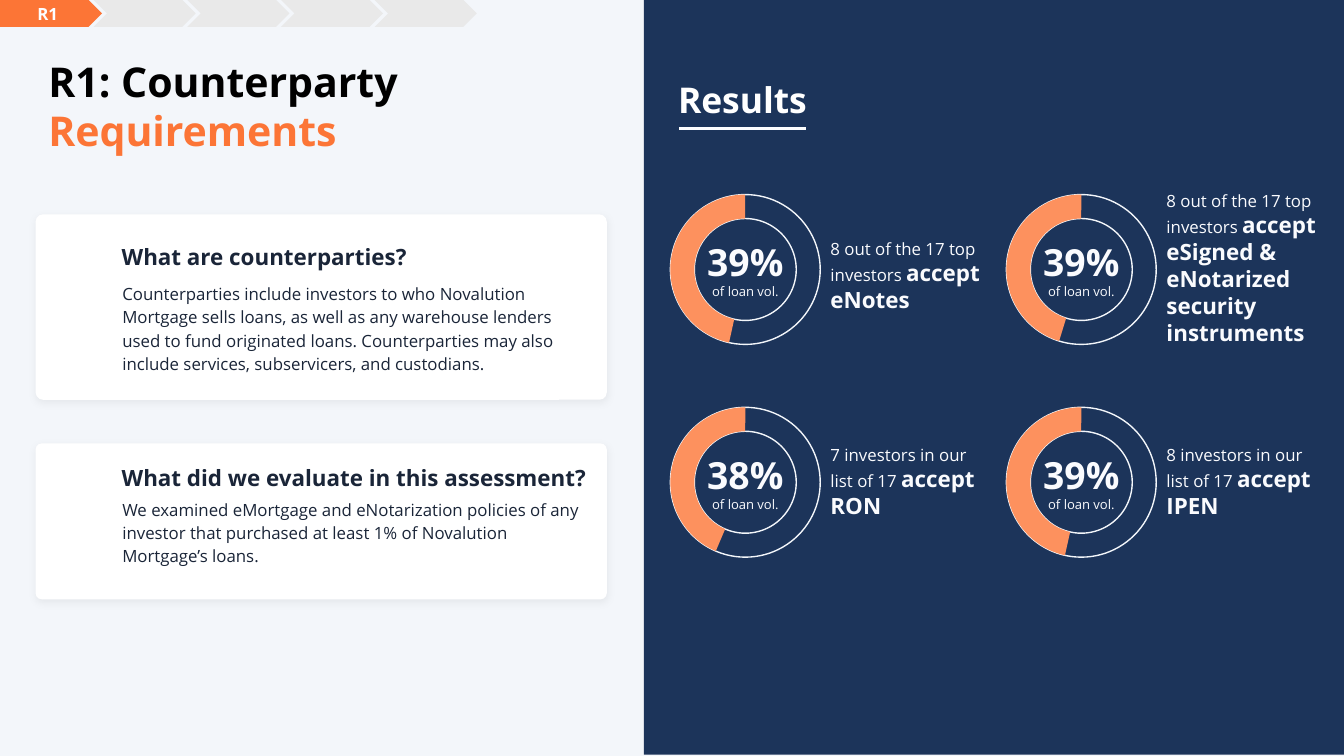
from dataclasses import dataclass
from typing import Any

from lxml import etree
from pptx import Presentation
from pptx.dml.color import RGBColor
from pptx.enum.shapes import MSO_CONNECTOR, MSO_SHAPE
from pptx.enum.text import MSO_ANCHOR, PP_ALIGN
from pptx.oxml import parse_xml
from pptx.oxml.ns import nsdecls, qn
from pptx.util import Inches, Pt

RECT, ROUND_RECT = MSO_SHAPE.RECTANGLE, MSO_SHAPE.ROUNDED_RECTANGLE
DONUT, BLOCK_ARC = MSO_SHAPE.DONUT, MSO_SHAPE.BLOCK_ARC
PENTAGON, CHEVRON = MSO_SHAPE.PENTAGON, MSO_SHAPE.CHEVRON
STRAIGHT = MSO_CONNECTOR.STRAIGHT
TOP, MIDDLE = MSO_ANCHOR.TOP, MSO_ANCHOR.MIDDLE
LEFT, CENTER = PP_ALIGN.LEFT, PP_ALIGN.CENTER

COLS, ROWS = 100, 56.25
TIGHT, WIDE = (0.7, 0.4), (1, 1)


@dataclass(frozen=True)
class Theme:
    font: str = "Open Sans"
    page: str = "F3F6FA"
    panel: str = "1C345A"
    white: str = "FFFFFF"
    light: str = "FAFBFE"
    bright: str = "FCFDFF"
    ink: str = "1A2538"
    black: str = "000000"
    accent: str = "FC7536"
    arc: str = "FD915E"
    idle: str = "E9E9E9"
    title: float = 22
    percent: float = 20
    section: float = 19
    heading: float = 12
    body: float = 9
    caption: float = 7


T = Theme()


@dataclass(frozen=True)
class Box:
    col: float
    row: float
    cols: float
    rows: float

    def emu(self) -> tuple[int, ...]:
        return tuple(cells(v) for v in (self.col, self.row, self.cols, self.rows))


@dataclass(frozen=True)
class Run:
    text: str
    size: float
    color: str
    bold: bool = False


@dataclass(frozen=True)
class Card:
    row: float
    rows: float
    heading: str
    heading_row: float
    body: str
    body_row: float


@dataclass(frozen=True)
class Gauge:
    percent: str
    start: float
    lead: str
    strong: str
    label_row: float
    label_rows: float


def cells(n: float) -> int:
    return Inches(n * 0.1)


def rgb(value: str) -> RGBColor:
    return RGBColor.from_string(value)


def write(sp: Any, paragraphs: list[list[Run]], inset: tuple[float, float],
          align: Any = LEFT, anchor: Any = TOP, spacing: float = 1.0) -> None:
    tf = sp.text_frame
    x, y = (cells(v) for v in inset)
    frame = {"word_wrap": True, "vertical_anchor": anchor, "margin_left": x,
             "margin_right": x, "margin_top": y, "margin_bottom": y}
    for name, value in frame.items():
        setattr(tf, name, value)
    for i, runs in enumerate(paragraphs):
        p = tf.add_paragraph() if i else tf.paragraphs[0]
        p.alignment, p.line_spacing, p.space_before = align, spacing, Pt(0)
        for run in runs:
            r = p.add_run()
            r.text = run.text
            style = {"name": T.font, "size": Pt(run.size), "bold": run.bold}
            for name, value in style.items():
                setattr(r.font, name, value)
            r.font.color.rgb = rgb(run.color)


def add_text(shapes: Any, box: Box, paragraphs: list[list[Run]],
             inset: tuple[float, float] = TIGHT, **options: Any) -> None:
    write(shapes.add_textbox(*box.emu()), paragraphs, inset, **options)


def add_shape(shapes: Any, kind: Any, box: Box, fill: str | None = None,
              line: str | None = None, adjust: tuple[float, ...] = ()) -> Any:
    sp = shapes.add_shape(kind, *box.emu())
    sp.shadow.inherit = False
    if fill:
        sp.fill.solid()
        sp.fill.fore_color.rgb = rgb(fill)
    else:
        sp.fill.background()
    if line:
        sp.line.color.rgb = rgb(line)
        sp.line.width = Pt(0.75)
    else:
        sp.line.fill.background()
    for i, value in enumerate(adjust):
        sp.adjustments[i] = value
    return sp


def add_card(shapes: Any, card: Card) -> None:
    sp = add_shape(shapes, ROUND_RECT, Box(2.65, card.row, 42.5, card.rows),
                   T.white, adjust=(0.04,))
    effects = sp._element.spPr.find(qn("a:effectLst"))
    effects.append(parse_xml(
        f'<a:outerShdw {nsdecls("a")} blurRad="{Pt(4.5)}" dist="{Pt(1.5)}" '
        f'dir="5400000" algn="t" rotWithShape="0"><a:srgbClr val="{T.black}">'
        '<a:alpha val="5000"/></a:srgbClr></a:outerShdw>'))
    add_text(shapes, Box(8.35, card.heading_row, 36.2, 2.8),
             [[Run(card.heading, T.heading, T.ink, True)]])
    add_text(shapes, Box(8.4, card.body_row, 36, 7.2),
             [[Run(card.body, T.body, T.ink)]], spacing=1.15)


def add_gauge(shapes: Any, gauge: Gauge, col: float, row: float) -> None:
    group = shapes.add_group_shape().shapes
    ring = Box(col, row, 11.15, 11.15)
    add_shape(group, DONUT, ring, line=T.page, adjust=(0.16,))
    add_shape(group, BLOCK_ARC, ring, T.arc,
              adjust=(gauge.start * 0.6, 270 * 0.6, 0.16))
    add_text(group, Box(col + 1.93, row + 2.9, 7.3, 5.3),
             [[Run(gauge.percent, T.percent, T.light, True)],
              [Run("of loan vol.", T.caption, T.light)]], align=CENTER)
    add_text(group, Box(col + 10.93, row + gauge.label_row, 13.4, gauge.label_rows),
             [[Run(gauge.lead, T.body, T.light),
               Run(gauge.strong, T.heading, T.light, True)]], WIDE)


def add_progress(shapes: Any, label: str, steps: int) -> None:
    group = shapes.add_group_shape().shapes
    for i in range(steps):
        kind, fill = (CHEVRON, T.idle) if i else (PENTAGON, T.accent)
        sp = add_shape(group, kind, Box(i * 6.97, 0, 7.6, 2), fill, adjust=(0.5,))
        if not i:
            write(sp, [[Run(label, T.body, T.bright, True)]], WIDE, CENTER, MIDDLE)


CARDS = [
    Card(33, 11.6, "What did we evaluate in this assessment?", 34.15,
         "We examined eMortgage and eNotarization policies of any investor that "
         "purchased at least 1% of Novalution Mortgage’s loans.", 36.55),
    Card(15.95, 13.8, "What are counterparties?", 17.7,
         "Counterparties include investors to who Novalution Mortgage sells loans, "
         "as well as any warehouse lenders used to fund originated loans. "
         "Counterparties may also include services, subservicers, and custodians.",
         20.5),
]
GAUGES = [
    Gauge("39%", 102.5, "8 out of the 17 top investors ", "accept eNotes", 2.3, 7.6),
    Gauge("39%", 107.2, "8 out of the 17 top investors ",
          "accept eSigned & eNotarized security instruments", -1.25, 13.6),
    Gauge("38%", 113.2, "7 investors in our list of 17 ", "accept RON", 1.8, 7.6),
    Gauge("39%", 102.6, "8 investors in our list of 17 ", "accept IPEN", 1.8, 7.6),
]


def main() -> None:
    prs = Presentation()
    prs.slide_width, prs.slide_height = cells(COLS), cells(ROWS)
    s = prs.slides.add_slide(prs.slide_layouts[5])
    s.background.fill.solid()
    s.background.fill.fore_color.rgb = rgb(T.page)
    title = s.shapes.title
    place = Box(2.6, 3.2, 42.5, 9.4).emu()
    for name, value in zip(("left", "top", "width", "height"), place):
        setattr(title, name, value)
    write(title, [[Run("R1: Counterparty ", T.title, T.black, True),
                   Run("Requirements", T.title, T.accent, True)]], WIDE)
    for card in CARDS:
        add_card(s.shapes, card)
    add_shape(s.shapes, RECT, Box(47.9, -0.1, 52.2, 56.25), T.panel)
    for i, gauge in enumerate(GAUGES):
        row, col = divmod(i, 2)
        add_gauge(s.shapes, gauge, 49.88 + col * 25, 14.48 + row * 15.83)
    add_text(s.shapes, Box(49.75, 5.4, 48.3, 4),
             [[Run("Results", T.section, T.white, True)]])
    rule = s.shapes.add_connector(STRAIGHT, *(cells(v) for v in (50.55, 9.55, 60, 9.55)))
    rule.line.color.rgb, rule.line.width = rgb(T.bright), Pt(1.5)
    etree.SubElement(rule._element.spPr, qn("a:effectLst"))
    add_progress(s.shapes, "R1", 5)
    prs.save("out.pptx")


if __name__ == "__main__":
    main()
